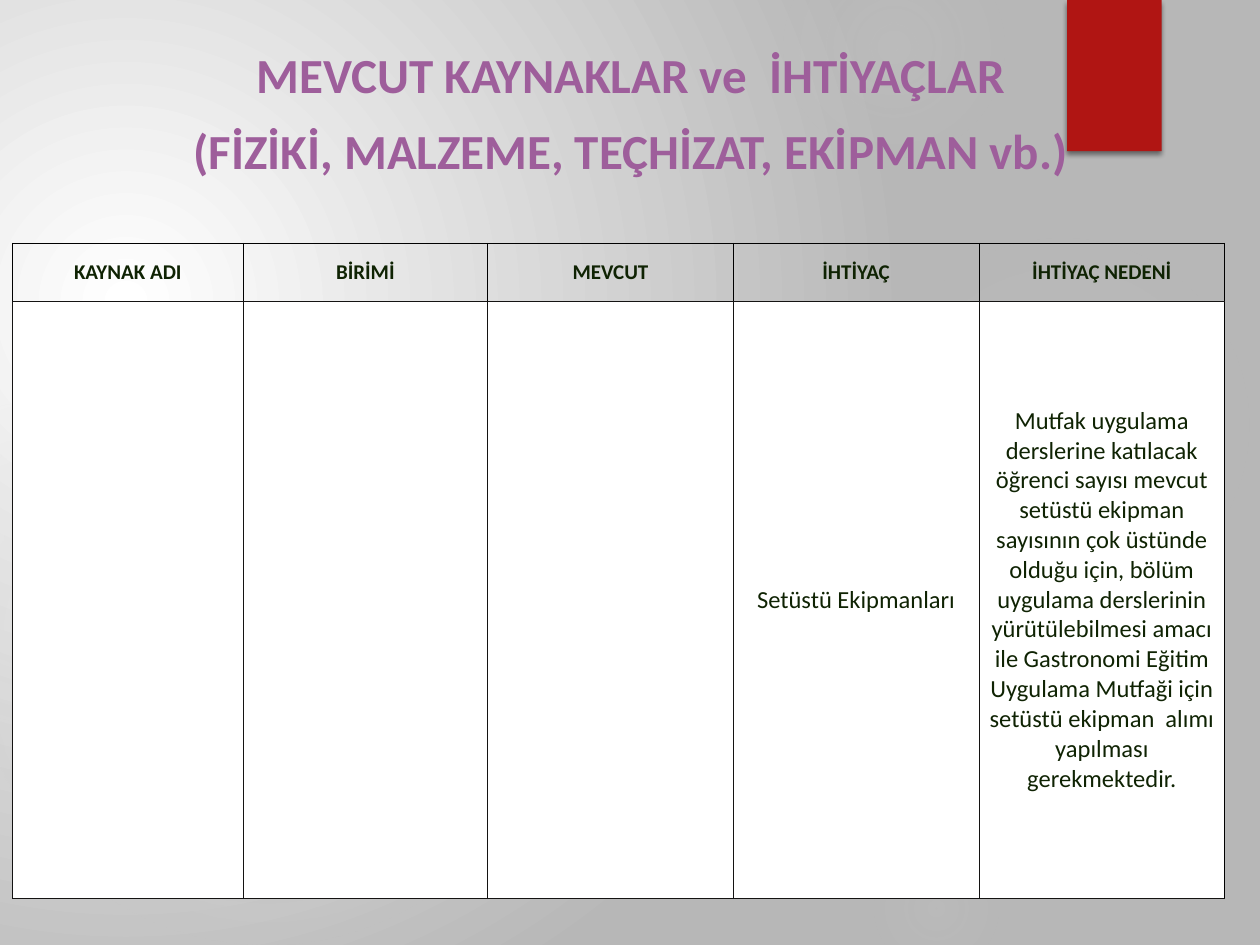
from dataclasses import dataclass

from lxml.etree import SubElement
from pptx import Presentation
from pptx.dml.color import RGBColor
from pptx.enum.shapes import MSO_SHAPE
from pptx.enum.text import MSO_ANCHOR, MSO_AUTO_SIZE, PP_ALIGN
from pptx.oxml import parse_xml
from pptx.oxml.ns import nsdecls, qn
from pptx.util import Inches, Pt


@dataclass(frozen=True)
class Theme:
    """Colours and type sizes of the slide."""
    font: str = "Calibri"
    white: str = "FFFFFF"
    backdrop: str = "B7B7B7"
    glow: str = "D9D9D9"
    ribbon: str = "B01513"
    title: str = "9E5E9B"
    text: str = "0F2303"
    black: str = "000000"
    border: str = "141312"
    title_size: int = 28
    header_size: int = 12
    body_size: int = 14
    border_width: float = 0.5


class SlideBuilder:
    """Holds the theme and the current slide."""

    def __init__(self, slide, theme):
        self.slide = slide
        self.theme = theme

    def radial_fill(self, fill, owner, stops, focus):
        """Give an owner element a circular gradient."""
        fill.background()
        placeholder = next(owner.iter(qn("a:noFill")))
        stop_xml = "".join(
            f'<a:gs pos="{position * 1000}"><a:srgbClr val="{color}">'
            f'<a:alpha val="{opacity * 1000}"/></a:srgbClr></a:gs>'
            for position, color, opacity in stops)
        left, top, right, bottom = (value * 1000 for value in focus)
        gradient = parse_xml(
            f'<a:gradFill {nsdecls("a")} rotWithShape="1"><a:gsLst>{stop_xml}</a:gsLst>'
            f'<a:path path="circle"><a:fillToRect l="{left}" t="{top}" r="{right}" '
            f'b="{bottom}"/></a:path></a:gradFill>')
        placeholder.getparent().replace(placeholder, gradient)

    def background(self):
        """Paint the slide background."""
        fill = self.slide.background.fill
        stops = [(0, self.theme.white, 100), (100, self.theme.backdrop, 100)]
        self.radial_fill(fill, self.slide.element, stops, (45, 65, 125, 100))

    def shape(self, kind, left, top, width, height):
        """Add a preset shape without shadow."""
        shape = self.slide.shapes.add_shape(
            kind, Inches(left), Inches(top), Inches(width), Inches(height))
        shape.shadow.inherit = False
        return shape

    def glow(self, left, top, diameter, opacities, reach):
        """Add a soft circle that fades to nothing at its reach."""
        circle = self.shape(MSO_SHAPE.OVAL, left, top, diameter, diameter)
        stops = [(position, self.theme.glow, opacity)
                 for position, opacity in zip((0, 36, reach), (*opacities, 0))]
        self.radial_fill(circle.fill, circle.element, stops, (50, 50, 50, 50))
        circle.line.fill.background()

    def ribbon(self, left, top, width, height):
        """Add the bookmark with its drop shadow."""
        ribbon = self.shape(MSO_SHAPE.RECTANGLE, left, top, width, height)
        ribbon.fill.solid()
        ribbon.fill.fore_color.rgb = RGBColor.from_string(self.theme.ribbon)
        ribbon.line.fill.background()
        effects = next(ribbon.element.iter(qn("a:effectLst")))
        shadow = SubElement(effects, qn("a:outerShdw"), blurRad=str(Pt(3)),
                            dist=str(Pt(2)), dir="5400000", rotWithShape="0")
        color = SubElement(shadow, qn("a:srgbClr"), val=self.theme.black)
        SubElement(color, qn("a:alpha"), val="45000")

    def add_text(self, paragraph, text, size, color, bold):
        """Add one centred run."""
        paragraph.alignment = PP_ALIGN.CENTER
        run = paragraph.add_run()
        run.text = text
        run.font.name = self.theme.font
        run.font.size = Pt(size)
        run.font.bold = bold
        run.font.color.rgb = RGBColor.from_string(color)

    def title(self, lines, left, top, width, height):
        """Place the title above the decoration and fill its lines."""
        title = self.slide.shapes.title
        title.left, title.top = Inches(left), Inches(top)
        title.width, title.height = Inches(width), Inches(height)
        self.slide.shapes.element.append(title.element)
        frame = title.text_frame
        frame.word_wrap = True
        frame.auto_size = MSO_AUTO_SIZE.NONE
        frame.vertical_anchor = MSO_ANCHOR.BOTTOM
        for index, line in enumerate(lines):
            paragraph = frame.add_paragraph() if index else frame.paragraphs[0]
            paragraph.line_spacing = 1.1
            paragraph.space_before = Pt(0)
            paragraph.space_after = Pt(6)
            self.add_text(paragraph, line, self.theme.title_size, self.theme.title, True)

    def borders(self, cell, colors):
        """Draw the left, right, top and bottom borders of a cell."""
        properties = cell._tc.get_or_add_tcPr()
        for side, color in zip("LRTB", colors):
            line = SubElement(properties, qn(f"a:ln{side}"),
                              w=str(Pt(self.theme.border_width)))
            fill = SubElement(line, qn("a:solidFill"))
            SubElement(fill, qn("a:srgbClr"), val=color)

    def cell(self, cell, text, is_header):
        """Style and fill one table cell."""
        theme = self.theme
        black, dark = theme.black, theme.border
        self.borders(cell, (black, black, black, dark) if is_header
                     else (dark, black, dark, dark))
        cell.margin_left = cell.margin_right = cell.margin_top = cell.margin_bottom = 0
        cell.vertical_anchor = MSO_ANCHOR.MIDDLE
        if is_header:
            cell.fill.background()
        else:
            cell.fill.solid()
            cell.fill.fore_color.rgb = RGBColor.from_string(theme.white)
        if text:
            size = theme.header_size if is_header else theme.body_size
            self.add_text(cell.text_frame.paragraphs[0], text, size, theme.text, is_header)

    def table(self, rows, left, top, widths, heights):
        """Add the table with a clear header row."""
        table = self.slide.shapes.add_table(
            len(rows), len(widths), Inches(left), Inches(top),
            Inches(sum(widths)), Inches(sum(heights))).table
        table.first_row = table.horz_banding = False
        for column, width in zip(table.columns, widths):
            column.width = Inches(width)
        for row_index, (row, height) in enumerate(zip(rows, heights)):
            table.rows[row_index].height = Inches(height)
            for column_index, text in enumerate(row):
                self.cell(table.cell(row_index, column_index), text, row_index == 0)


GLOWS = [
    (6.89, 1.83, 3.08, (7, 6), 69),
    (6.22, -0.5, 1.75, (14, 7), 73),
    (6.89, 6.67, 1.08, (9, 5), 66),
    (-0.17, 2.92, 4.58, (11, 10), 75),
    (-0.92, 3.17, 2.58, (8, 8), 72),
]
TITLE_LINES = ["MEVCUT KAYNAKLAR ve  İHTİYAÇLAR",
               "(FİZİKİ, MALZEME, TEÇHİZAT, EKİPMAN vb.)"]
REASON = ("Mutfak uygulama derslerine katılacak öğrenci sayısı mevcut setüstü ekipman "
          "sayısının çok üstünde olduğu için, bölüm uygulama derslerinin "
          "yürütülebilmesi amacı ile Gastronomi Eğitim Uygulama Mutfaği için "
          "setüstü ekipman  alımı yapılması gerekmektedir.")
ROWS = [
    ["KAYNAK ADI", "BİRİMİ", "MEVCUT", "İHTİYAÇ", "İHTİYAÇ NEDENİ"],
    ["", "", "", "Setüstü Ekipmanları", REASON],
]


def main():
    """Build and save the slide."""
    presentation = Presentation()
    presentation.slide_width, presentation.slide_height = Inches(10), Inches(7.5)
    slide = presentation.slides.add_slide(presentation.slide_layouts[5])
    builder = SlideBuilder(slide, Theme())
    builder.background()
    for glow in GLOWS:
        builder.glow(*glow)
    builder.ribbon(8.47, 0, 0.75, 1.2)
    builder.title(TITLE_LINES, 0.52, 0.83, 8.97, 0.64)
    builder.table(ROWS, 0.1, 1.93, [1.83, 1.94, 1.95, 1.95, 1.95], [0.46, 4.74])
    presentation.save("out.pptx")


if __name__ == "__main__":
    main()
